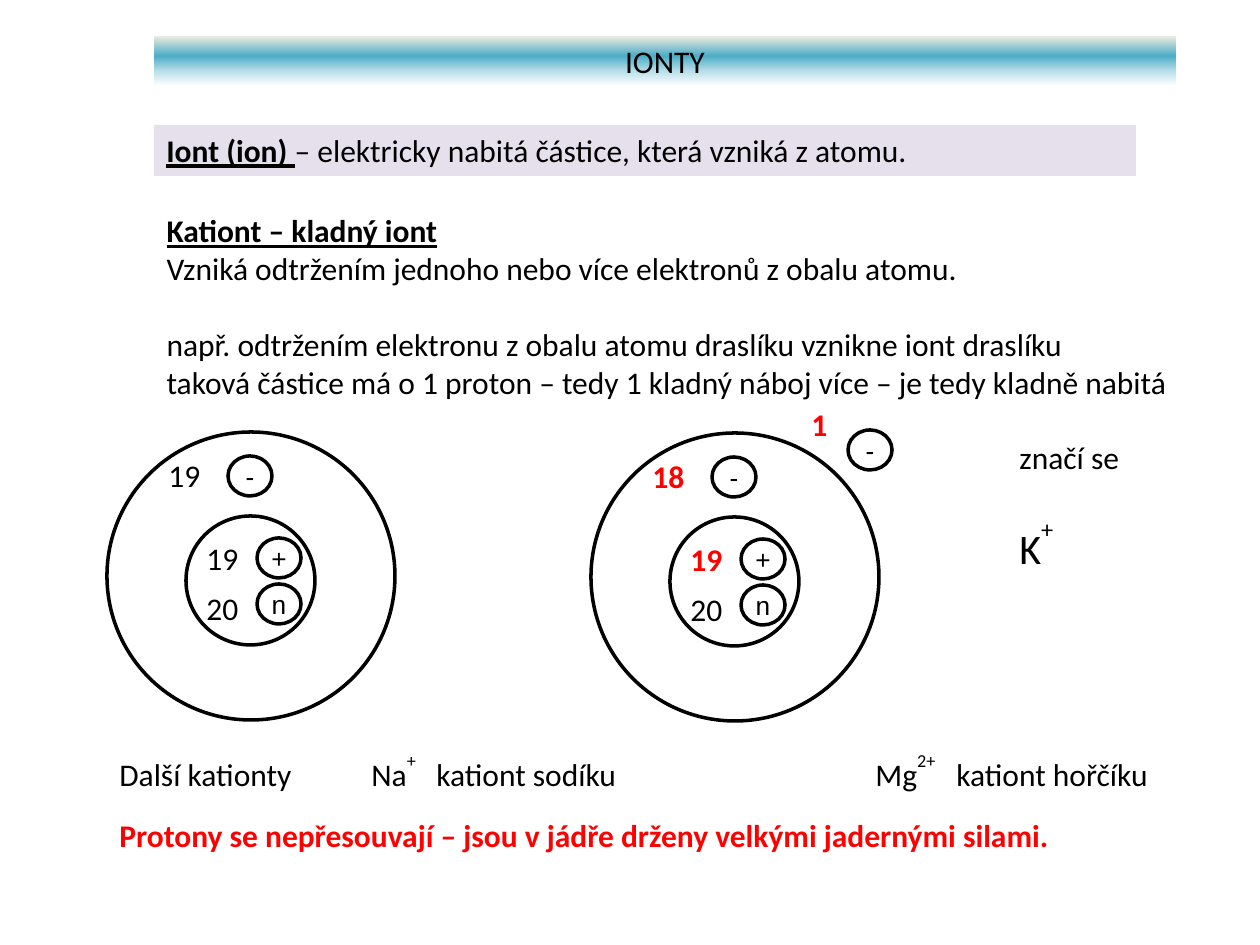
from dataclasses import dataclass

from lxml import etree
from pptx import Presentation
from pptx.dml.color import RGBColor
from pptx.enum.shapes import MSO_SHAPE
from pptx.enum.text import MSO_ANCHOR, MSO_AUTO_SIZE, PP_ALIGN
from pptx.oxml.ns import qn
from pptx.util import Emu, Pt

PX_PER_INCH = 126
RECTANGLE, OVAL = MSO_SHAPE.RECTANGLE, MSO_SHAPE.OVAL
LEFT, CENTER = PP_ALIGN.LEFT, PP_ALIGN.CENTER
TOP, MIDDLE = MSO_ANCHOR.TOP, MSO_ANCHOR.MIDDLE
NO_AUTOFIT = MSO_AUTO_SIZE.NONE
TITLE_AND_CONTENT = 1


@dataclass(frozen=True)
class Theme:
    font: str = "Calibri"
    symbol_font: str = "Arial"
    text_size: int = 18
    symbol_size: int = 15
    formula_size: int = 24
    blank_line: int = 22
    line_width: int = 2
    black: str = "000000"
    red: str = "FF0000"
    white: str = "FFFFFF"
    lilac: str = "E6E0EC"
    banner: tuple = ((0, "EEECE1"), (40, "4BACC6"), (70, "B7DEE8"), (100, "FFFFFF"))


THEME = Theme()


def px(length):
    return Emu(round(length * 914400 / PX_PER_INCH))


def place(shape, box):
    shape.left, shape.top, shape.width, shape.height = map(px, box)


def add_paragraph(frame, *parts, size=THEME.text_size, font=THEME.font,
                  color=THEME.black, bold=False, align=LEFT, space_before=0):
    """Fill the empty first paragraph or add one; a part is text or (text, style)."""
    first = frame.paragraphs[0]
    paragraph = frame.add_paragraph() if first.runs else first
    paragraph.alignment = align
    paragraph.space_before = Pt(space_before)
    paragraph.font.name = font
    paragraph.font.size = Pt(size)
    paragraph.font.bold = bold
    paragraph.font.color.rgb = RGBColor.from_string(color)
    for part in parts:
        text, style = (part, None) if isinstance(part, str) else part
        run = paragraph.add_run()
        run.text = text
        if style == "heading":
            run.font.bold = run.font.underline = True
        elif style == "superscript":
            run._r.get_or_add_rPr().set("baseline", "60000")
    return paragraph


def add_text(shapes, box, *parts, **style):
    frame = shapes.add_textbox(*map(px, box)).text_frame
    frame.word_wrap = True
    add_paragraph(frame, *parts, **style)
    return frame


def add_circle(shapes, box, fill=None):
    circle = shapes.add_shape(OVAL, *map(px, box))
    circle.shadow.inherit = False
    if fill:
        circle.fill.solid()
        circle.fill.fore_color.rgb = RGBColor.from_string(fill)
    else:
        circle.fill.background()
    circle.line.color.rgb = RGBColor.from_string(THEME.black)
    circle.line.width = Pt(THEME.line_width)
    return circle


def add_particle(shapes, left, top, symbol):
    frame = add_circle(shapes, (left, top, 44, 40), THEME.white).text_frame
    frame.margin_left = frame.margin_right = 0
    frame.margin_top = frame.margin_bottom = 0
    frame.vertical_anchor = MIDDLE
    add_paragraph(frame, symbol, size=THEME.symbol_size, font=THEME.symbol_font,
                  align=CENTER)


def add_atom(slide, left, top, electrons, protons, neutrons, highlight=False):
    """Draw shell, nucleus and counted particles; highlight marks the charges in red."""
    shapes = slide.shapes.add_group_shape().shapes
    add_circle(shapes, (left, top, 288, 288))
    add_circle(shapes, (left + 79, top + 84, 129, 129))
    rows = (
        (electrons, "-", 49, 18, 121, 24, highlight),
        (protons, "+", 87, 101, 150, 106, highlight),
        (neutrons, "n", 87, 151, 150, 152, False),
    )
    for count, symbol, text_x, text_y, symbol_x, symbol_y, marked in rows:
        add_text(shapes, (left + text_x, top + text_y, 62, 51), str(count),
                 color=THEME.red if marked else THEME.black, bold=marked)
        add_particle(shapes, left + symbol_x, top + symbol_y, symbol)
    return shapes


def fill_title(title, box):
    place(title, box)
    title.fill.gradient()
    title.fill.gradient_angle = 270
    stops = next(title._element.iter(qn("a:gsLst")))
    for stop in list(stops):
        stops.remove(stop)
    for percent, color in THEME.banner:
        stop = etree.SubElement(stops, qn("a:gs"), pos=str(percent * 1000))
        etree.SubElement(stop, qn("a:srgbClr"), val=color)
    title.text_frame.auto_size = NO_AUTOFIT
    title.text_frame.vertical_anchor = TOP
    add_paragraph(title.text_frame, "IONTY", align=CENTER)


def add_definition(slide, box):
    banner = slide.shapes.add_shape(RECTANGLE, *map(px, box))
    banner.shadow.inherit = False
    banner.fill.solid()
    banner.fill.fore_color.rgb = RGBColor.from_string(THEME.lilac)
    banner.line.fill.background()
    banner.text_frame.vertical_anchor = TOP
    add_paragraph(banner.text_frame, ("Iont (ion) ", "heading"),
                  "– elektricky nabitá částice, která vzniká z atomu.")


def fill_body(body, box):
    place(body, box)
    frame = body.text_frame
    frame.auto_size = NO_AUTOFIT
    add_paragraph(frame, ("Kationt – kladný iont", "heading"))
    add_paragraph(frame, "Vzniká odtržením jednoho nebo více elektronů z obalu atomu.")
    add_paragraph(frame, "např. odtržením elektronu z obalu atomu draslíku vznikne iont draslíku",
                  space_before=THEME.blank_line)
    add_paragraph(frame, "taková částice má o 1 proton – tedy 1 kladný náboj více – je tedy kladně nabitá")
    for paragraph in frame.paragraphs:
        properties = paragraph._p.get_or_add_pPr()
        properties.set("marL", "0")
        properties.set("indent", "0")
        no_bullet = etree.Element(qn("a:buNone"))
        properties.insert_element_before(no_bullet, "a:tabLst", "a:defRPr")


def add_ionization(slide, left, top):
    """Draw the potassium atom, its cation with the released electron, and the symbol."""
    add_atom(slide, left, top, 19, 19, 20)
    ion = add_atom(slide, left + 484, top + 1, 18, 19, 20, highlight=True)
    add_particle(ion, left + 741, top - 2, "-")
    add_text(slide.shapes, (left + 692, top - 33, 62, 51), "1", color=THEME.red, bold=True)
    notation = add_text(slide.shapes, (left + 900, top, 129, 140), "značí se")
    add_paragraph(notation, "K", ("+", "superscript"), size=THEME.formula_size,
                  space_before=THEME.blank_line)


def add_examples(slide, left, top, width):
    frame = add_text(slide.shapes, (left, top, width, 51),
                     "Další kationty\tNa", ("+", "superscript"), "\tkationt sodíku\tMg",
                     ("2+", "superscript"), "\tkationt hořčíku")
    properties = frame.paragraphs[0]._p.get_or_add_pPr()
    tabs = etree.Element(qn("a:tabLst"))
    for position in (252, 317, 756, 837):
        etree.SubElement(tabs, qn("a:tab"), pos=str(px(position)), algn="l")
    properties.insert_element_before(tabs, "a:defRPr")
    add_text(slide.shapes, (left, top + 67, width, 51),
             "Protony se nepřesouvají – jsou v jádře drženy velkými jadernými silami.",
             color=THEME.red, bold=True)


def main():
    presentation = Presentation()
    presentation.slide_width, presentation.slide_height = px(1260), px(945)
    slide = presentation.slides.add_slide(presentation.slide_layouts[TITLE_AND_CONTENT])
    fill_title(slide.shapes.title, (154, 36, 1022, 50))
    add_definition(slide, (154, 125, 982, 51))
    fill_body(slide.placeholders[1], (154, 205, 1052, 204))
    add_ionization(slide, 107, 432)
    add_examples(slide, 107, 743, 1070)
    presentation.save("out.pptx")


if __name__ == "__main__":
    main()
